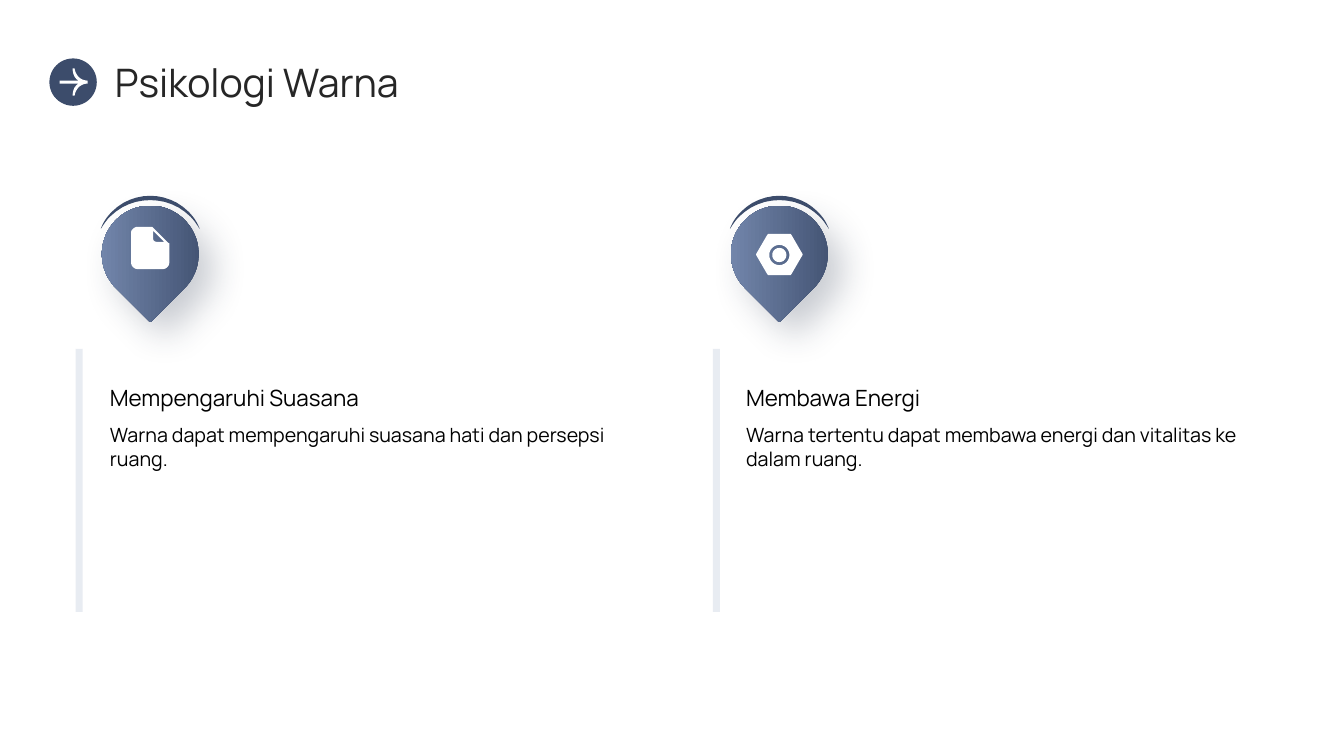
from math import cos, pi, sin

from lxml import etree
from pptx import Presentation
from pptx.dml.color import RGBColor
from pptx.enum.shapes import MSO_SHAPE
from pptx.enum.text import MSO_ANCHOR
from pptx.oxml.ns import qn
from pptx.util import Pt

OVAL, RECT, TEARDROP = MSO_SHAPE.OVAL, MSO_SHAPE.RECTANGLE, MSO_SHAPE.TEAR
TOP, MIDDLE, BOTTOM = MSO_ANCHOR.TOP, MSO_ANCHOR.MIDDLE, MSO_ANCHOR.BOTTOM
PX = 9144
FINE = 10
STEPS = 12
FONT = "Manrope"
COLORS = {
    "navy": "3C4C6B",
    "steel": "7B8FB5",
    "shadow": "2D3950",
    "bar": "D3DAE6",
    "white": "FFFFFF",
    "title": "262626",
    "text": "000000",
}
ARROW = [[
    (59, 80), (78, 80), (74, 78, 72, 73, 72, 68), (74, 68),
    (75, 75, 80, 80, 87, 80), (87, 83), (80, 83, 75, 88, 74, 95),
    (72, 95), (72, 90, 74, 85, 78, 83), (59, 83),
]]
CRESCENT = [[
    (0, 34), (2, 28, 6, 22, 11, 17), (32, -4, 66, -4, 87, 17),
    (92, 22, 96, 28, 98, 34), (96, 31), (94, 28, 92, 25, 89, 22),
    (67, 0, 31, 0, 9, 22), (6, 25, 4, 28, 2, 31),
]]
PAGE = [
    [(52, 36), (52, 44), (52, 46, 54, 47, 56, 47), (63, 47)],
    [
        (37, 32), (50, 32), (51, 32, 51, 32, 52, 33), (67, 48),
        (68, 48, 68, 49, 68, 50), (68, 67), (68, 71, 65, 74, 61, 74),
        (37, 74), (33, 74, 30, 71, 30, 67), (30, 38),
        (30, 35, 33, 32, 37, 32),
    ],
]


def rgb(name):
    """Return the named colour."""
    return RGBColor.from_string(COLORS[name])


def circle(cx, cy, radius, steps=48):
    """Return a round contour."""
    turns = [2 * pi * i / steps for i in range(steps)]
    return [(cx + radius * cos(t), cy + radius * sin(t)) for t in turns]


NUT = [
    circle(49, 60, 7),
    circle(49, 60, 10),
    [
        (38, 39), (60, 39), (61, 40), (72, 59), (72, 60), (61, 79),
        (60, 80), (38, 80), (37, 79), (26, 60), (26, 59), (37, 40),
    ],
]


def flatten(contour):
    """Turn points and cubic curves into a list of points."""
    points = [contour[0]]
    for part in contour[1:]:
        if len(part) == 2:
            points.append(part)
            continue
        curve = (points[-1], part[:2], part[2:4], part[4:])
        for i in range(1, STEPS + 1):
            t = i / STEPS
            weights = ((1 - t) ** 3, 3 * t * (1 - t) ** 2, 3 * t * t * (1 - t), t ** 3)
            points.append(tuple(
                sum(w * p[axis] for w, p in zip(weights, curve)) for axis in (0, 1)
            ))
    return points


def paint(sp, color):
    """Give a shape a plain fill without line or shadow."""
    sp.shadow.inherit = False
    sp.line.fill.background()
    sp.fill.solid()
    sp.fill.fore_color.rgb = rgb(color)


def add_outline(s, contours, color, x=0, y=0):
    """Draw closed contours as one filled shape."""
    builder = None
    for contour in contours:
        points = [((px + x) * FINE, (py + y) * FINE) for px, py in flatten(contour)]
        if builder is None:
            builder = s.shapes.build_freeform(*points[0], scale=PX / FINE)
        else:
            builder.move_to(*points[0])
        builder.add_line_segments(points[1:], close=True)
    paint(builder.convert_to_shape(), color)


def add_shape(s, kind, x, y, w, h, color):
    """Add a filled preset shape."""
    sp = s.shapes.add_shape(kind, x * PX, y * PX, w * PX, h * PX)
    paint(sp, color)
    return sp


def set_alpha(color_element, percent):
    """Set the opacity of a colour element."""
    etree.SubElement(color_element, qn("a:alpha"), val=str(percent * 1000))


def add_text(s, text, x, y, w, h, size, color="text", anchor=TOP):
    """Add a wrapped text box without insets."""
    tf = s.shapes.add_textbox(x * PX, y * PX, w * PX, h * PX).text_frame
    tf.word_wrap = True
    tf.vertical_anchor = anchor
    tf.margin_left = tf.margin_top = tf.margin_right = tf.margin_bottom = 0
    p = tf.paragraphs[0]
    p.text = text
    r = p.runs[0]
    r.font.name = FONT
    r.font.size = Pt(size)
    r.font.color.rgb = rgb(color)


def add_pin(s, x, icon):
    """Add a map pin with its cap and icon."""
    sp = add_shape(s, TEARDROP, x + 1, 204, 96, 96, "navy")
    sp.rotation = 135
    sp.fill.gradient()
    sp.fill.gradient_angle = 315
    for stop, color, position in zip(sp.fill.gradient_stops, ("navy", "steel"), (0.01, 1)):
        stop.color.rgb = rgb(color)
        stop.position = position
    effects = sp._element.spPr.find(qn("a:effectLst"))
    shadow = etree.SubElement(
        effects, qn("a:outerShdw"), blurRad=str(Pt(26)), dist=str(Pt(15)),
        dir="2700000", algn="ctr", rotWithShape="0",
    )
    set_alpha(etree.SubElement(shadow, qn("a:srgbClr"), val=COLORS["shadow"]), 25)
    add_outline(s, CRESCENT, "navy", x, 193)
    add_outline(s, icon, "white", x, 193)


def add_topic(s, pin_x, bar_x, text_x, icon, heading, body):
    """Add a pin, a side bar, a heading and a body text."""
    add_pin(s, pin_x, icon)
    bar = add_shape(s, RECT, bar_x, 346, 7, 261, "bar")
    set_alpha(bar._element.spPr.find(qn("a:solidFill"))[0], 50)
    add_text(s, heading, text_x, 326, 518, 82, 16, anchor=BOTTOM)
    add_text(s, body, text_x, 420, 518, 159, 14)


def main():
    """Build the slide and save it."""
    prs = Presentation()
    prs.slide_width, prs.slide_height = 1333 * PX, 750 * PX
    s = prs.slides.add_slide(prs.slide_layouts[6])
    add_topic(s, 100, 75, 109, PAGE, "Mempengaruhi Suasana",
              "Warna dapat mempengaruhi suasana hati dan persepsi ruang.")
    add_topic(s, 724, 707, 740, NUT, "Membawa Energi",
              "Warna tertentu dapat membawa energi dan vitalitas ke dalam ruang.")
    add_text(s, "Psikologi Warna", 114, 58, 1145, 47, 28, "title", MIDDLE)
    add_shape(s, OVAL, 49, 58, 47, 47, "navy")
    add_outline(s, ARROW, "white")
    prs.save("out.pptx")


if __name__ == "__main__":
    main()
